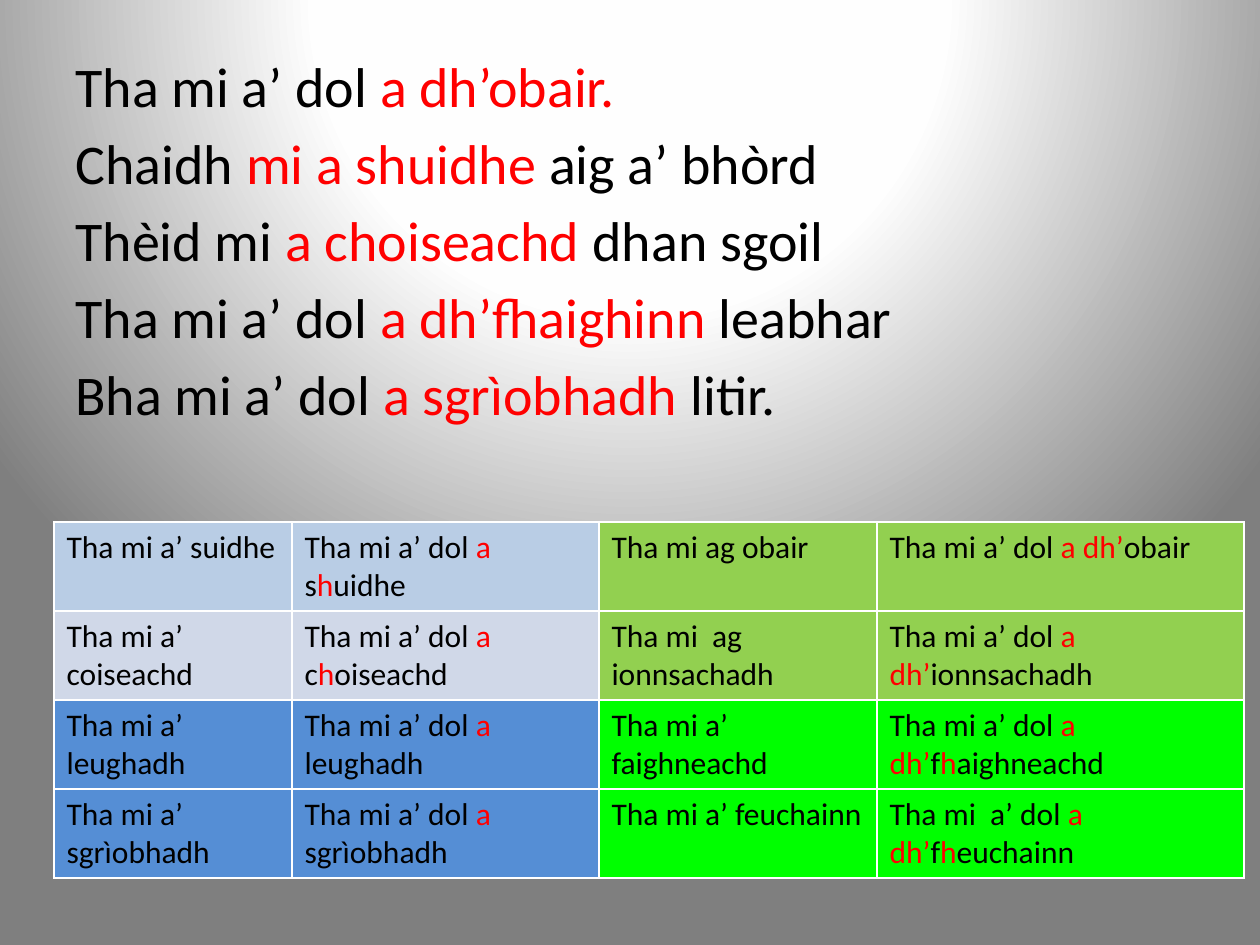
from lxml.etree import SubElement
from pptx import Presentation
from pptx.dml.color import RGBColor as RGB
from pptx.oxml.ns import qn
from pptx.util import Pt

PX = 914400 / 126
BLACK = RGB(0x00, 0x00, 0x00)
RED = RGB(0xFF, 0x00, 0x00)
PALE_BLUE = RGB(0xB9, 0xCD, 0xE5)
GREY_BLUE = RGB(0xD0, 0xD8, 0xE8)
BLUE = RGB(0x55, 0x8E, 0xD5)
GREEN = RGB(0x92, 0xD0, 0x50)
LIME = RGB(0x00, 0xFF, 0x00)
GRADIENT = [(0, "FFFFFF"), (40, "FEFEFE"), (100, "7F7F7F")]

SENTENCES = [
    "Tha mi a’ dol |a dh’obair.",
    "Chaidh |mi a shuidhe |aig a’ bhòrd",
    "Thèid mi |a choiseachd |dhan sgoil",
    "Tha mi a’ dol |a dh’fhaighinn |leabhar",
    "Bha mi a’ dol |a sgrìobhadh |litir.",
]
ROWS = [
    (PALE_BLUE, GREEN, ["Tha mi a’ suidhe", "Tha mi a’ dol |a| s|h|uidhe",
                        "Tha mi ag obair", "Tha mi a’ dol |a dh’|obair"]),
    (GREY_BLUE, GREEN, ["Tha mi a’ coiseachd", "Tha mi a’ dol |a| c|h|oiseachd",
                        "Tha mi  ag ionnsachadh", "Tha mi a’ dol |a dh’|ionnsachadh"]),
    (BLUE, LIME, ["Tha mi a’ leughadh", "Tha mi a’ dol |a |leughadh",
                  "Tha mi a’ faighneachd", "Tha mi a’ dol |a dh’|f|h|aighneachd"]),
    (BLUE, LIME, ["Tha mi a’ sgrìobhadh", "Tha mi a’ dol |a |sgrìobhadh",
                  "Tha mi a’ feuchainn", "Tha mi  a’ dol |a dh’|f|h|euchainn"]),
]
COL_WIDTHS = [238, 307, 278, 367]
ROW_HEIGHT = 89


def px(*lengths):
    return [round(n * PX) for n in lengths]


def add_runs(p, marked, size):
    for i, part in enumerate(marked.split("|")):
        r = p.add_run()
        r.text = part
        r.font.name = "Calibri"
        r.font.size = Pt(size)
        r.font.bold = False
        r.font.color.rgb = RED if i % 2 else BLACK


prs = Presentation()
prs.slide_width, prs.slide_height = px(1260, 945)
s = prs.slides.add_slide(prs.slide_layouts[6])

s.background.fill.gradient()
grad = s.background.fill._fill._gradFill
for child in list(grad):
    grad.remove(child)
stops = SubElement(grad, qn("a:gsLst"))
for pos, color in GRADIENT:
    stop = SubElement(stops, qn("a:gs"), pos=str(pos * 1000))
    SubElement(stop, qn("a:srgbClr"), val=color)
circle = SubElement(grad, qn("a:path"), path="circle")
SubElement(circle, qn("a:fillToRect"), l="50000", t="-80000", r="50000", b="180000")

sp = s.shapes.add_textbox(*px(63, 45, 1134, 799))
tf = sp.text_frame
tf.word_wrap = True
for i, sentence in enumerate(SENTENCES):
    p = tf.add_paragraph() if i else tf.paragraphs[0]
    p.space_before = Pt(5.7)
    add_runs(p, sentence, 32)

frame = s.shapes.add_table(len(ROWS), len(COL_WIDTHS),
                           *px(54, 522, sum(COL_WIDTHS), ROW_HEIGHT * len(ROWS)))
table = frame.table
for column, width in zip(table.columns, px(*COL_WIDTHS)):
    column.width = width
for row, (left_fill, right_fill, texts) in zip(table.rows, ROWS):
    for i, (cell, text) in enumerate(zip(row.cells, texts)):
        cell.fill.solid()
        cell.fill.fore_color.rgb = left_fill if i < 2 else right_fill
        add_runs(cell.text_frame.paragraphs[0], text, 18)

prs.save("out.pptx")
